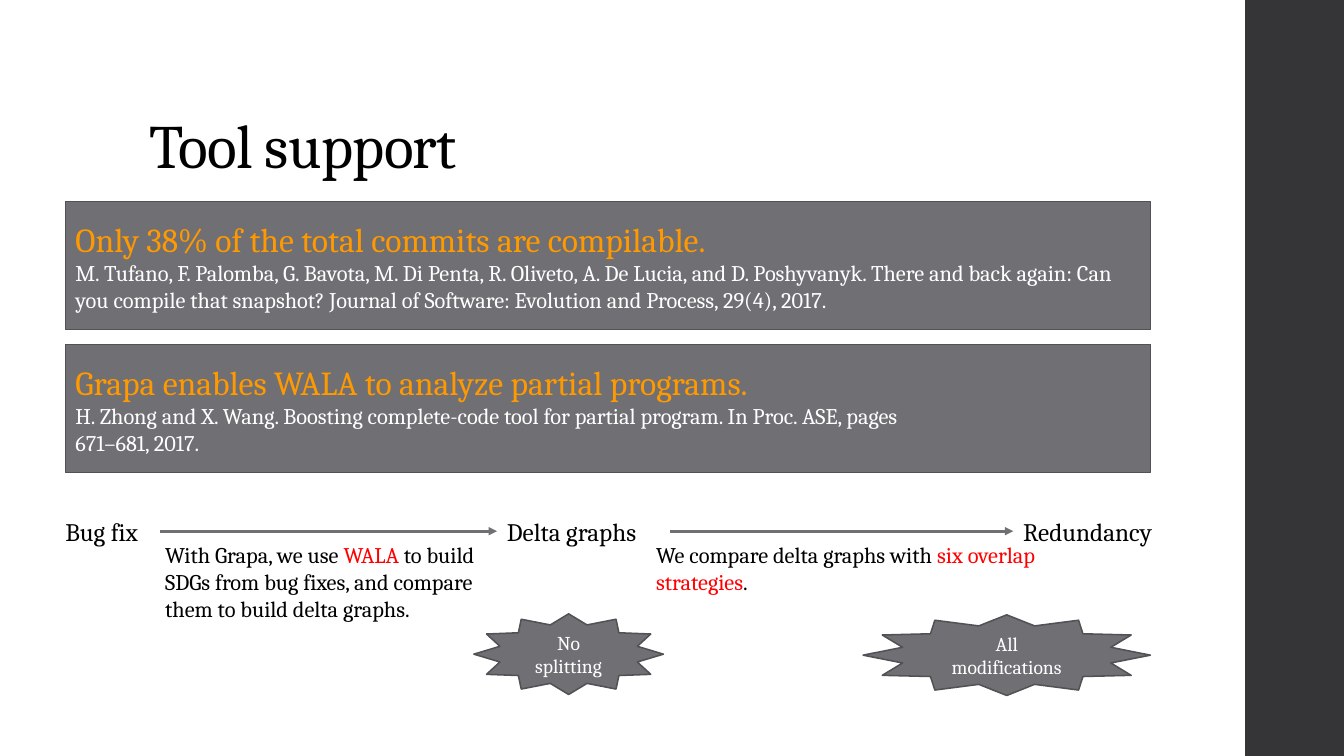
from dataclasses import dataclass

from lxml import etree
from pptx import Presentation
from pptx.dml.color import RGBColor
from pptx.enum.shapes import MSO_CONNECTOR, MSO_SHAPE
from pptx.enum.text import MSO_ANCHOR, PP_ALIGN
from pptx.oxml.ns import qn
from pptx.shapes.autoshape import Shape
from pptx.slide import Slide
from pptx.text.text import _Paragraph as Para
from pptx.util import Inches, Pt

RECT, STAR = MSO_SHAPE.RECTANGLE, MSO_SHAPE.STAR_12_POINT
STRAIGHT = MSO_CONNECTOR.STRAIGHT
TOP, MIDDLE, BOTTOM = MSO_ANCHOR.TOP, MSO_ANCHOR.MIDDLE, MSO_ANCHOR.BOTTOM
LEFT, CENTER = PP_ALIGN.LEFT, PP_ALIGN.CENTER
LEFT_SIDE, RIGHT_SIDE = 1, 3


@dataclass(frozen=True)
class Theme:
    font: str = "Cambria"
    ink: str = "000000"
    white: str = "FFFFFF"
    gray: str = "6F6F74"
    edge: str = "525256"
    band: str = "353537"
    gold: str = "FF9900"
    red: str = "FF0000"
    title: int = 44
    head: int = 24
    label: int = 18
    body: int = 16
    badge: int = 14
    border: float = 1.1
    arrow: float = 2


@dataclass(frozen=True)
class Box:
    x: float
    y: float
    w: float
    h: float


@dataclass(frozen=True)
class Card:
    top: float
    head: str
    lines: tuple[str, ...]


@dataclass(frozen=True)
class Step:
    x: float
    w: float
    text: str


@dataclass(frozen=True)
class Note:
    box: Box
    lead: str
    key: str
    tail: str


@dataclass(frozen=True)
class Badge:
    box: Box
    text: str


THEME = Theme()
CARDS = (
    Card(2, "Only 38% of the total commits are compilable.", (
        "M. Tufano, F. Palomba, G. Bavota, M. Di Penta, R. Oliveto, A. De Lucia, "
        "and D. Poshyvanyk. There and back again: Can you compile that snapshot? "
        "Journal of Software: Evolution and Process, 29(4), 2017.",)),
    Card(3.42, "Grapa enables WALA to analyze partial programs.", (
        "H. Zhong and X. Wang. Boosting complete-code tool for partial program. "
        "In Proc. ASE, pages",
        "671–681, 2017.")),
)
STEPS = (
    Step(0.55, 1.04, "Bug fix"),
    Step(4.93, 1.72, "Delta graphs"),
    Step(10.05, 1.65, "Redundancy"),
)
NOTES = (
    Note(Box(1.54, 5.32, 3.58, 1.18), "With Grapa, we use ", "WALA",
         " to build SDGs from bug fixes, and compare them to build delta graphs."),
    Note(Box(6.41, 5.32, 4.21, 0.64), "We compare delta graphs with ",
         "six overlap strategies", "."),
)
BADGES = (
    Badge(Box(8.56, 6.1, 2.85, 0.8), "All modifications"),
    Badge(Box(4.7, 6.09, 1.88, 0.8), "No splitting"),
)


def style(para: Para, size: int, *colors: str, align: PP_ALIGN = LEFT) -> None:
    """Format each run of a paragraph, one colour per run."""
    para.alignment = align
    for run, color in zip(para.runs, colors):
        run.font.name = THEME.font
        run.font.size = Pt(size)
        run.font.color.rgb = RGBColor.from_string(color)


def add_box(slide: Slide, box: Box, anchor: MSO_ANCHOR = TOP) -> Shape:
    shape = slide.shapes.add_textbox(
        Inches(box.x), Inches(box.y), Inches(box.w), Inches(box.h))
    shape.text_frame.word_wrap = True
    shape.text_frame.vertical_anchor = anchor
    return shape


def add_form(slide: Slide, kind: MSO_SHAPE, box: Box, fill: str,
             edge: str | None = None) -> Shape:
    shape = slide.shapes.add_shape(
        kind, Inches(box.x), Inches(box.y), Inches(box.w), Inches(box.h))
    shape.shadow.inherit = False
    shape.fill.solid()
    shape.fill.fore_color.rgb = RGBColor.from_string(fill)
    if edge:
        shape.line.color.rgb = RGBColor.from_string(edge)
        shape.line.width = Pt(THEME.border)
    else:
        shape.line.fill.background()
    shape.text_frame.word_wrap = True
    shape.text_frame.vertical_anchor = MIDDLE
    return shape


def add_title(slide: Slide, text: str) -> None:
    frame = add_box(slide, Box(1.38, 0.4, 10.6, 1.45), BOTTOM).text_frame
    frame.text = text
    para = frame.paragraphs[0]
    para.line_spacing = 0.9
    style(para, THEME.title, THEME.ink)
    para.runs[0]._r.get_or_add_rPr().set("spc", "-50")


def add_card(slide: Slide, card: Card) -> None:
    box = Box(0.65, card.top, 10.76, 1.27)
    frame = add_form(slide, RECT, box, THEME.gray, THEME.edge).text_frame
    frame.text = "\n".join((card.head, *card.lines))
    head, *lines = frame.paragraphs
    style(head, THEME.head, THEME.gold)
    for line in lines:
        style(line, THEME.body, THEME.white)


def add_step(slide: Slide, step: Step) -> Shape:
    shape = add_box(slide, Box(step.x, 5.07, step.w, 0.4))
    shape.text_frame.text = step.text
    style(shape.text_frame.paragraphs[0], THEME.label, THEME.ink)
    return shape


def add_arrow(slide: Slide, start: Shape, end: Shape) -> None:
    arrow = slide.shapes.add_connector(STRAIGHT, 0, 0, 0, 0)
    arrow.begin_connect(start, RIGHT_SIDE)
    arrow.end_connect(end, LEFT_SIDE)
    arrow.line.color.rgb = RGBColor.from_string(THEME.gray)
    arrow.line.width = Pt(THEME.arrow)
    props = arrow._element.spPr
    etree.SubElement(props.find(qn("a:ln")), qn("a:tailEnd"), type="triangle")
    etree.SubElement(props, qn("a:effectLst"))


def add_note(slide: Slide, note: Note) -> None:
    para = add_box(slide, note.box).text_frame.paragraphs[0]
    for text in (note.lead, note.key, note.tail):
        para.add_run().text = text
    style(para, THEME.body, THEME.ink, THEME.red, THEME.ink)


def add_badge(slide: Slide, badge: Badge) -> None:
    frame = add_form(slide, STAR, badge.box, THEME.gray, THEME.edge).text_frame
    frame.text = badge.text
    style(frame.paragraphs[0], THEME.badge, THEME.white, align=CENTER)


def main() -> None:
    deck = Presentation()
    deck.slide_width, deck.slide_height = Inches(13.33), Inches(7.5)
    slide = deck.slides.add_slide(deck.slide_layouts[6])

    # Side band and title
    add_form(slide, RECT, Box(12.35, 0, 0.98, 7.5), THEME.band)
    add_title(slide, "Tool support")

    # Findings with their references
    for card in CARDS:
        add_card(slide, card)

    # Process from bug fix to redundancy
    steps = [add_step(slide, step) for step in STEPS]
    for start, end in zip(steps, steps[1:]):
        add_arrow(slide, start, end)

    # Remarks below the process
    for note in NOTES:
        add_note(slide, note)
    for badge in BADGES:
        add_badge(slide, badge)

    deck.save("out.pptx")


if __name__ == "__main__":
    main()
